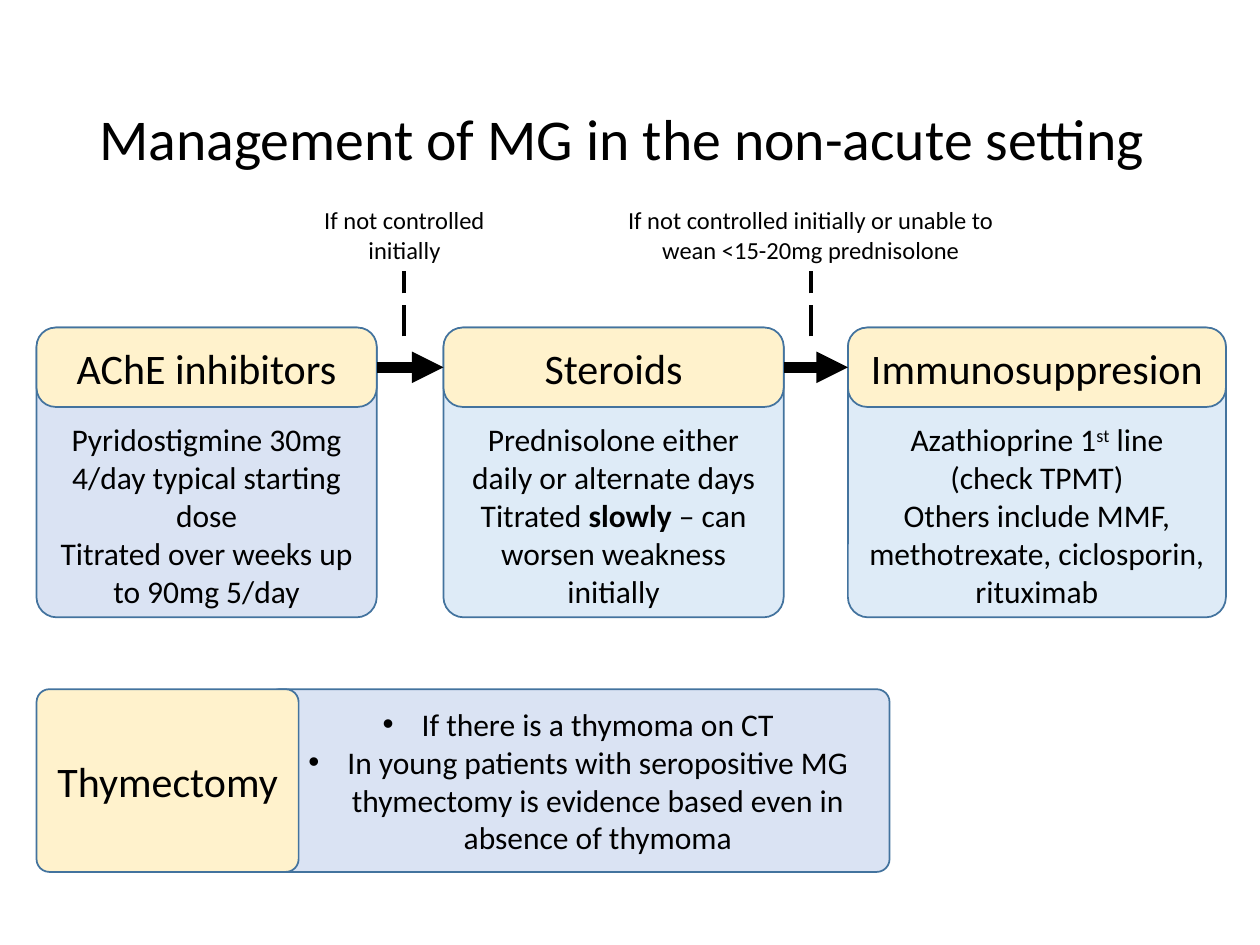
import pptx
import pptx.dml.color
import pptx.enum.dml
import pptx.enum.shapes
import pptx.enum.text
import pptx.oxml
import pptx.oxml.ns
import pptx.util

Inches = pptx.util.Inches
Pt = pptx.util.Pt
RGBColor = pptx.dml.color.RGBColor
Anchor = pptx.enum.text.MSO_ANCHOR
Align = pptx.enum.text.PP_ALIGN

BLACK = RGBColor(0x00, 0x00, 0x00)
CREAM = RGBColor(0xFF, 0xF2, 0xCC)
LAVENDER = RGBColor(0xDA, 0xE3, 0xF3)
PALE_BLUE = RGBColor(0xDE, 0xEB, 0xF7)
OUTLINE = RGBColor(0x43, 0x73, 0x9E)

# Treatment steps: left, width, heading, body fill, body paragraphs.
# A paragraph is a list of (text, style) spans.
STEP_TOP, STEP_HEIGHT, HEADING_HEIGHT = 2.6, 2.3, 0.63
STEPS = [
    (0.29, 2.7, "AChE inhibitors", LAVENDER, [
        [("Pyridostigmine 30mg 4/day typical starting dose", "")],
        [("Titrated over weeks up to 90mg 5/day", "")]]),
    (3.52, 2.7, "Steroids", PALE_BLUE, [
        [("Prednisolone either daily or alternate days", "")],
        [("Titrated ", ""), ("slowly", "bold"),
         (" – can worsen weakness initially", "")]]),
    (6.73, 3, "Immunosuppresion", PALE_BLUE, [
        [("Azathioprine 1", ""), ("st", "superscript"),
         (" line (check TPMT)", "")],
        [("Others include MMF, methotrexate, ciclosporin, rituximab", "")]]),
]

# Conditions between steps: left, width, text
CONDITIONS = [
    (2.37, 1.68, "If not controlled initially"),
    (4.86, 3.15,
     "If not controlled initially or unable to wean <15-20mg prednisolone"),
]

THYMECTOMY_REASONS = [
    [("If there is a thymoma on CT", "")],
    [("In young patients with seropositive MG thymectomy is evidence based "
      "even in absence of thymoma", "")],
]


def apply_format(target, values):
    for name, value in values.items():
        setattr(target, name, value)


def add_bullet(para):
    properties = para._p.get_or_add_pPr()
    properties.set("marL", str(Inches(0.31)))
    properties.set("indent", str(Inches(-0.31)))
    namespace = pptx.oxml.ns.nsdecls("a")
    for xml in (f'<a:buFont {namespace} typeface="Arial"/>',
                f'<a:buChar {namespace} char="•"/>'):
        properties.append(pptx.oxml.parse_xml(xml))


def write_text(frame, paragraphs, size, align=Align.CENTER,
               anchor=Anchor.MIDDLE, bulleted=False):
    apply_format(frame, {"word_wrap": True, "vertical_anchor": anchor})
    for index, spans in enumerate(paragraphs):
        para = frame.add_paragraph() if index else frame.paragraphs[0]
        para.alignment = align
        if bulleted:
            add_bullet(para)
        for text, style in spans:
            span = para.add_run()
            span.text = text
            apply_format(span.font, {"name": "Calibri", "size": Pt(size),
                                     "bold": style == "bold"})
            span.font.color.rgb = BLACK
            if style == "superscript":
                span._r.get_or_add_rPr().set("baseline", "30000")


def add_label(page, left, top, width, height, text, size, **layout):
    box = page.shapes.add_textbox(
        Inches(left), Inches(top), Inches(width), Inches(height))
    write_text(box.text_frame, [[(text, "")]], size, **layout)
    return box


def add_panel(page, left, top, width, height, fill, rounding):
    panel = page.shapes.add_shape(
        pptx.enum.shapes.MSO_SHAPE.ROUNDED_RECTANGLE,
        Inches(left), Inches(top), Inches(width), Inches(height))
    panel.adjustments[0] = rounding
    panel.shadow.inherit = False
    panel.fill.solid()
    panel.fill.fore_color.rgb = fill
    panel.line.color.rgb = OUTLINE
    panel.line.width = Pt(1)
    return panel


def add_line(page, start, end, width):
    line = page.shapes.add_connector(
        pptx.enum.shapes.MSO_CONNECTOR.STRAIGHT,
        Inches(start[0]), Inches(start[1]), Inches(end[0]), Inches(end[1]))
    line.line.color.rgb = BLACK
    line.line.width = Pt(width)
    line._element.spPr.append(pptx.oxml.parse_xml(
        f'<a:effectLst {pptx.oxml.ns.nsdecls("a")}/>'))
    return line


def add_title(page, left, top, width, height):
    box = add_label(page, left, top, width, height,
                    "Management of MG in the non-acute setting", 33,
                    align=Align.LEFT)
    box.text_frame.paragraphs[0].line_spacing = 0.9


def add_step(page, left, top, width, height, heading, fill, paragraphs):
    # Body text starts below the heading that overlaps it
    body = add_panel(page, left, top, width, height, fill, 0.07)
    apply_format(body.text_frame, {"margin_top": Inches(0.69),
                                   "margin_bottom": Inches(0)})
    write_text(body.text_frame, paragraphs, 18, anchor=Anchor.TOP)
    header = add_panel(page, left, top, width, HEADING_HEIGHT, CREAM, 0.24)
    write_text(header.text_frame, [[(heading, "")]], 24)


def add_transition(page, start, end, condition):
    # Thick arrow from one step to the next
    middle = STEP_TOP + HEADING_HEIGHT / 2
    arrow = add_line(page, (start, middle), (end, middle), 6)
    arrow.line._get_or_add_ln().append(pptx.oxml.parse_xml(
        f'<a:tailEnd {pptx.oxml.ns.nsdecls("a")} type="triangle"/>'))

    # Condition above, joined by a dashed line
    left, width, text = condition
    top, height = 1.58, 0.57
    add_label(page, left, top, width, height, text, 14, anchor=Anchor.TOP)
    centre = left + width / 2
    dashes = add_line(page, (centre, 2.67), (centre, top + height), 2.25)
    dashes.line.dash_style = pptx.enum.dml.MSO_LINE.LONG_DASH


def add_thymectomy(page, left, top, width, height):
    heading_width, overlap = 2.08, 0.25
    inset = heading_width - overlap
    reasons = add_panel(page, left + inset, top, width - inset, height,
                        LAVENDER, 0.07)
    write_text(reasons.text_frame, THYMECTOMY_REASONS, 18, bulleted=True)
    heading = add_panel(page, left, top, heading_width, height, CREAM, 0.07)
    write_text(heading.text_frame, [[("Thymectomy", "")]], 24)


def main():
    deck = pptx.Presentation()
    deck.slide_width, deck.slide_height = Inches(10), Inches(7.5)
    page = deck.slides.add_slide(deck.slide_layouts[6])

    add_title(page, 0.69, 0.4, 8.62, 1.45)
    for left, width, heading, fill, paragraphs in STEPS:
        add_step(page, left, STEP_TOP, width, STEP_HEIGHT,
                 heading, fill, paragraphs)
    for before, after, condition in zip(STEPS, STEPS[1:], CONDITIONS):
        add_transition(page, before[0] + before[1], after[0], condition)
    add_thymectomy(page, 0.29, 5.47, 6.77, 1.45)

    deck.save("out.pptx")


if __name__ == "__main__":
    main()
